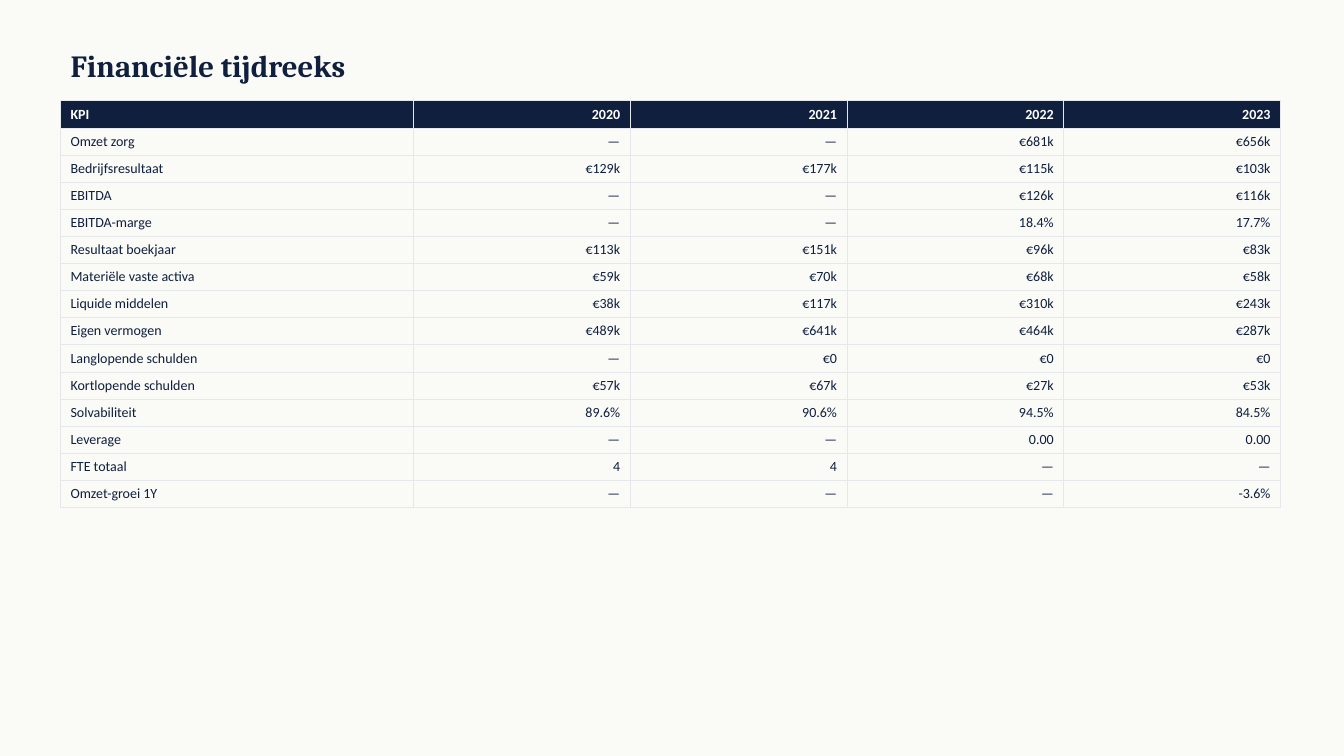
"""Build a slide with a table of yearly financial indicators."""
import pptx
import pptx.dml.color
import pptx.enum.text
import pptx.oxml
import pptx.oxml.ns
import pptx.util

PX = 9144
NAVY, WHITE, PAPER, GRID = "0F1F3D", "FFFFFF", "FAFAF7", "E5E7EB"
COLUMN_WIDTHS = [350] + [215] * 4
ROW_HEIGHT = 26
ROWS = [
    ("KPI", "2020", "2021", "2022", "2023"),
    ("Omzet zorg", "—", "—", "€681k", "€656k"),
    ("Bedrijfsresultaat", "€129k", "€177k", "€115k", "€103k"),
    ("EBITDA", "—", "—", "€126k", "€116k"),
    ("EBITDA-marge", "—", "—", "18.4%", "17.7%"),
    ("Resultaat boekjaar", "€113k", "€151k", "€96k", "€83k"),
    ("Materiële vaste activa", "€59k", "€70k", "€68k", "€58k"),
    ("Liquide middelen", "€38k", "€117k", "€310k", "€243k"),
    ("Eigen vermogen", "€489k", "€641k", "€464k", "€287k"),
    ("Langlopende schulden", "—", "€0", "€0", "€0"),
    ("Kortlopende schulden", "€57k", "€67k", "€27k", "€53k"),
    ("Solvabiliteit", "89.6%", "90.6%", "94.5%", "84.5%"),
    ("Leverage", "—", "—", "0.00", "0.00"),
    ("FTE totaal", "4", "4", "—", "—"),
    ("Omzet-groei 1Y", "—", "—", "—", "-3.6%"),
]


def px(n):
    return pptx.util.Emu(n * PX)


def rgb(value):
    return pptx.dml.color.RGBColor.from_string(value)


def format_paragraph(p, font, size, color, bold, align):
    p.alignment = align
    p.font.name = font
    p.font.size = pptx.util.Pt(size)
    p.font.bold = bold
    p.font.color.rgb = rgb(color)


def add_title(s, text, x, y, w, h):
    sp = s.shapes.title
    sp.left, sp.top, sp.width, sp.height = map(px, (x, y, w, h))
    tf = sp.text_frame
    tf.text = text
    tf.auto_size = pptx.enum.text.MSO_AUTO_SIZE.NONE
    tf.vertical_anchor = pptx.enum.text.MSO_ANCHOR.MIDDLE
    format_paragraph(tf.paragraphs[0], "Cambria", 22, NAVY, True,
                     pptx.enum.text.PP_ALIGN.LEFT)


def set_borders(cell, color, width):
    tc_pr = cell._tc.get_or_add_tcPr()
    for side in "LRTB":
        tc_pr.append(pptx.oxml.parse_xml(
            f'<a:ln{side} {pptx.oxml.ns.nsdecls("a")} w="{pptx.util.Pt(width)}">'
            f'<a:solidFill><a:srgbClr val="{color}"/></a:solidFill></a:ln{side}>'))


def fill_cell(cell, text, header, align):
    set_borders(cell, GRID, 0.5)
    if header:
        cell.fill.solid()
        cell.fill.fore_color.rgb = rgb(NAVY)
    else:
        cell.fill.background()
    cell.text = text
    format_paragraph(cell.text_frame.paragraphs[0], "Calibri", 10,
                     WHITE if header else NAVY, header, align)


def add_kpi_table(s, x, y):
    frame = s.shapes.add_table(len(ROWS), len(COLUMN_WIDTHS), px(x), px(y),
                               px(sum(COLUMN_WIDTHS)), px(ROW_HEIGHT * len(ROWS)))
    table = frame.table
    table.horz_banding = False
    for column, width in zip(table.columns, COLUMN_WIDTHS):
        column.width = px(width)
    aligns = pptx.enum.text.PP_ALIGN
    for i, values in enumerate(ROWS):
        table.rows[i].height = px(ROW_HEIGHT)
        for j, text in enumerate(values):
            fill_cell(table.cell(i, j), text, i == 0,
                      aligns.RIGHT if j else aligns.LEFT)


def main():
    prs = pptx.Presentation()
    prs.slide_width, prs.slide_height = px(1333), px(750)
    s = prs.slides.add_slide(prs.slide_layouts.get_by_name("Title Only"))
    s.background.fill.solid()
    s.background.fill.fore_color.rgb = rgb(PAPER)
    add_title(s, "Financiële tijdreeks", 60, 40, 1200, 50)
    add_kpi_table(s, 60, 100)
    prs.save("out.pptx")


if __name__ == "__main__":
    main()
